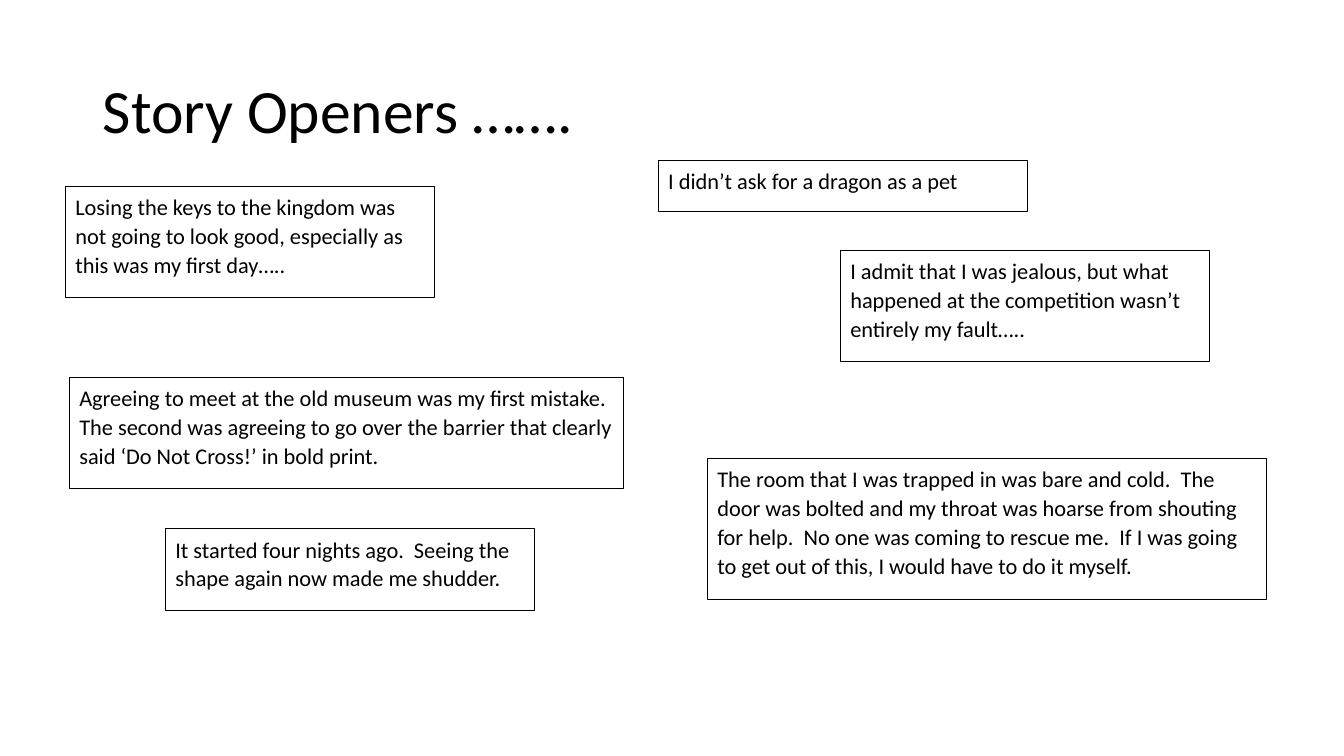
from pptx import Presentation
from pptx.dml.color import RGBColor
from pptx.enum.shapes import MSO_SHAPE
from pptx.enum.text import MSO_ANCHOR, MSO_AUTO_SIZE, PP_ALIGN
from pptx.util import Cm, Pt

RECTANGLE = MSO_SHAPE.RECTANGLE
TOP, MIDDLE = MSO_ANCHOR.TOP, MSO_ANCHOR.MIDDLE
LEFT = PP_ALIGN.LEFT
GROW = MSO_AUTO_SIZE.SHAPE_TO_FIT_TEXT

FONT = "Calibri"
COLOURS = {"text": "000000", "border": "000000", "paper": "FFFFFF"}

TITLE = "Story Openers ……."
TITLE_BOX = (2.34, 1.02, 29.21, 3.68)

OPENERS = [
    ((1.65, 4.7, 9.3, 2.8),
     "Losing the keys to the kingdom was not going to look good, "
     "especially as this was my first day….."),
    ((16.59, 4.04, 9.3, 1.3),
     "I didn’t ask for a dragon as a pet"),
    ((21.18, 6.32, 9.3, 2.8),
     "I admit that I was jealous, but what happened at the competition "
     "wasn’t entirely my fault….."),
    ((4.17, 13.33, 9.3, 2.06),
     "It started four nights ago.  Seeing the shape again now made me shudder."),
    ((17.83, 11.56, 14.1, 3.54),
     "The room that I was trapped in was bare and cold.  The door was bolted "
     "and my throat was hoarse from shouting for help.  No one was coming to "
     "rescue me.  If I was going to get out of this, I would have to do it myself."),
    ((1.75, 9.52, 13.97, 2.8),
     "Agreeing to meet at the old museum was my first mistake.  The second was "
     "agreeing to go over the barrier that clearly said ‘Do Not Cross!’ in bold print."),
]


def colour(name):
    return RGBColor.from_string(COLOURS[name])


def write_text(shape, text, size, line_spacing, anchor):
    text_frame = shape.text_frame
    text_frame.word_wrap = True
    text_frame.vertical_anchor = anchor
    text_frame.text = text
    paragraph = text_frame.paragraphs[0]
    paragraph.alignment = LEFT
    paragraph.line_spacing = line_spacing
    font = paragraph.runs[0].font
    font.name = FONT
    font.size = Pt(size)
    font.color.rgb = colour("text")
    return paragraph


def add_title(slide, box, text):
    shape = slide.shapes.add_textbox(*map(Cm, box))
    write_text(shape, text, 44, 0.9, MIDDLE)


def add_opener(slide, box, text):
    shape = slide.shapes.add_shape(RECTANGLE, *map(Cm, box))
    shape.shadow.inherit = False
    shape.fill.solid()
    shape.fill.fore_color.rgb = colour("paper")
    shape.line.color.rgb = colour("border")
    shape.line.width = Pt(0.75)
    paragraph = write_text(shape, text, 16, 1.07, TOP)
    paragraph.space_after = Pt(8)
    shape.text_frame.auto_size = GROW


def main():
    presentation = Presentation()
    presentation.slide_width = Cm(33.87)
    presentation.slide_height = Cm(19.05)
    slide = presentation.slides.add_slide(presentation.slide_layouts[6])
    add_title(slide, TITLE_BOX, TITLE)
    for box, text in OPENERS:
        add_opener(slide, box, text)
    presentation.save("out.pptx")


if __name__ == "__main__":
    main()
